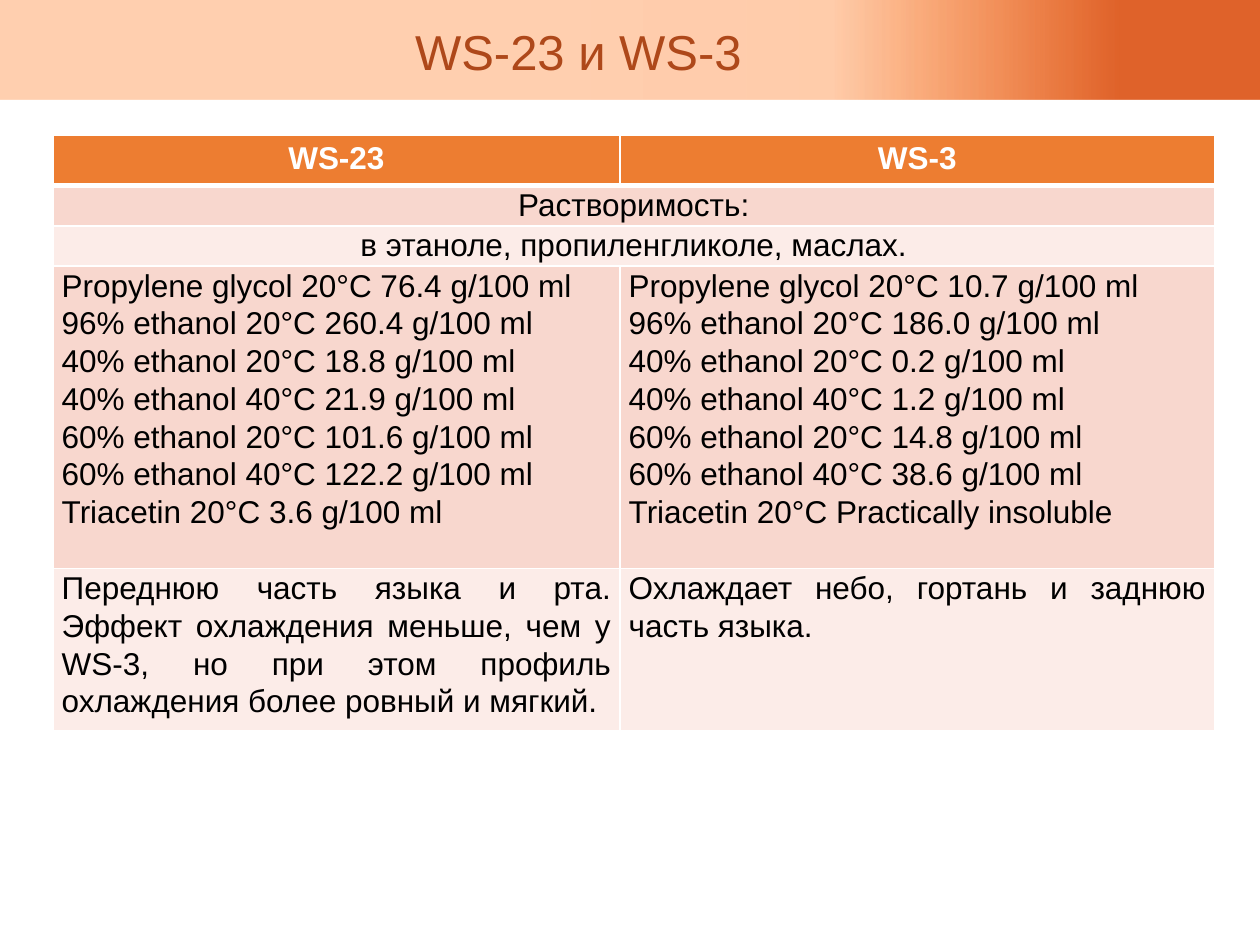
from dataclasses import dataclass

from lxml import etree
from pptx import Presentation
from pptx import util as u
from pptx.dml.color import RGBColor
from pptx.enum import shapes, text
from pptx.oxml import parse_xml
from pptx.oxml.ns import nsdecls, qn


@dataclass(frozen=True)
class Theme:
    font: str = "Arial"
    title_size: int = 28
    body_size: int = 18
    title: str = "AE481A"
    white: str = "FFFFFF"
    black: str = "000000"
    header: str = "ED7D31"
    dark_band: str = "F8D7CE"
    light_band: str = "FCECE8"
    banner: tuple = ((45, "FF6600", 31), (66, "FF6600", 33), (89, "DF622A", 100))


@dataclass(frozen=True)
class Row:
    height: float
    fill: str
    cells: tuple[str, ...]
    align: text.PP_ALIGN = text.PP_ALIGN.JUSTIFY
    header: bool = False


T = Theme()
CENTER = text.PP_ALIGN.CENTER
COLUMNS = (4.5, 4.72)
SOLVENTS = ("Propylene glycol 20°C", "96% ethanol 20°C", "40% ethanol 20°C",
            "40% ethanol 40°C", "60% ethanol 20°C", "60% ethanol 40°C",
            "Triacetin 20°C")
WS23 = ("76.4", "260.4", "18.8", "21.9", "101.6", "122.2", "3.6")
WS3 = ("10.7", "186.0", "0.2", "1.2", "14.8", "38.6")


def solubility(values: tuple[str, ...]) -> list[str]:
    return [f"{solvent} {value} g/100 ml" for solvent, value in zip(SOLVENTS, values)]


ROWS = (
    Row(0.37, T.header, ("WS-23", "WS-3"), CENTER, header=True),
    Row(0.3, T.dark_band, ("Растворимость:",), CENTER),
    Row(0.3, T.light_band, ("в этаноле, пропиленгликоле, маслах.",), CENTER),
    Row(2.4, T.dark_band, (
        "\n".join(solubility(WS23)),
        "\n".join(solubility(WS3) + [f"{SOLVENTS[-1]} Practically insoluble"]))),
    Row(1.2, T.light_band, (
        "Переднюю часть языка и рта. Эффект охлаждения меньше, чем у WS-3, "
        "но при этом профиль охлаждения более ровный и мягкий.",
        "Охлаждает небо, гортань и заднюю часть языка.")),
)


def style_text(tf, size: int, color: str, align, spacing: float, bold: bool = False) -> None:
    for p in tf.paragraphs:
        p.alignment = align
        p.line_spacing = spacing
        for r in p.runs:
            r.font.name = T.font
            r.font.size = u.Pt(size)
            r.font.bold = bold
            r.font.color.rgb = RGBColor.from_string(color)


def add_banner(s) -> None:
    sp = s.shapes.add_shape(shapes.MSO_SHAPE.RECTANGLE, 0, 0, u.Inches(10), u.Inches(0.79))
    sp.shadow.inherit = False
    sp.line.fill.background()
    stops = "".join(
        f'<a:gs pos="{pos * 1000}"><a:srgbClr val="{color}">'
        f'<a:alpha val="{alpha * 1000}"/></a:srgbClr></a:gs>'
        for pos, color, alpha in T.banner)
    gradient = parse_xml(f'<a:gradFill {nsdecls("a")} rotWithShape="1"><a:gsLst>{stops}'
                         '</a:gsLst><a:lin ang="0" scaled="1"/></a:gradFill>')
    sp._element.spPr.find(qn("a:prstGeom")).addnext(gradient)


def add_title(s) -> None:
    sp = s.shapes.add_textbox(u.Inches(0.28), u.Inches(0.03), u.Inches(8.62), u.Inches(0.81))
    tf = sp.text_frame
    tf.word_wrap = True
    tf.vertical_anchor = text.MSO_ANCHOR.MIDDLE
    tf.text = "WS-23 и WS-3"
    style_text(tf, T.title_size, T.title, CENTER, 0.9)


def set_borders(cell, top: int, bottom: int) -> None:
    tc_pr = cell._tc.get_or_add_tcPr()
    widths = {"lnL": 1, "lnR": 1, "lnT": top, "lnB": bottom}
    for i, (tag, width) in enumerate(widths.items()):
        ln = etree.Element(qn(f"a:{tag}"), w=str(u.Pt(width)))
        fill = etree.SubElement(ln, qn("a:solidFill"))
        etree.SubElement(fill, qn("a:srgbClr"), val=T.white)
        tc_pr.insert(i, ln)


def fill_row(table, index: int, row: Row) -> None:
    table.rows[index].height = u.Inches(row.height)
    if len(row.cells) == 1:
        table.cell(index, 0).merge(table.cell(index, len(COLUMNS) - 1))
    for col in range(len(COLUMNS)):
        cell = table.cell(index, col)
        cell.fill.solid()
        cell.fill.fore_color.rgb = RGBColor.from_string(row.fill)
        set_borders(cell, 3 if index == 1 else 1, 3 if row.header else 1)
        if not row.header:
            cell.margin_left = cell.margin_right = u.Inches(0.07)
            cell.margin_top = cell.margin_bottom = 0
        if col < len(row.cells):
            cell.text_frame.text = row.cells[col]
            style_text(cell.text_frame, T.body_size, T.white if row.header else T.black,
                       row.align, 1.0 if row.header else 1.07, row.header)


def add_comparison(s) -> None:
    table = s.shapes.add_table(
        len(ROWS), len(COLUMNS), u.Inches(0.42), u.Inches(1.07),
        u.Inches(sum(COLUMNS)), u.Inches(sum(row.height for row in ROWS))).table
    for column, width in zip(table.columns, COLUMNS):
        column.width = u.Inches(width)
    for index, row in enumerate(ROWS):
        fill_row(table, index, row)


def main() -> None:
    prs = Presentation()
    prs.slide_width, prs.slide_height = u.Inches(10), u.Inches(7.5)
    s = prs.slides.add_slide(prs.slide_layouts[6])
    add_banner(s)
    add_title(s)
    add_comparison(s)
    prs.save("out.pptx")


if __name__ == "__main__":
    main()
